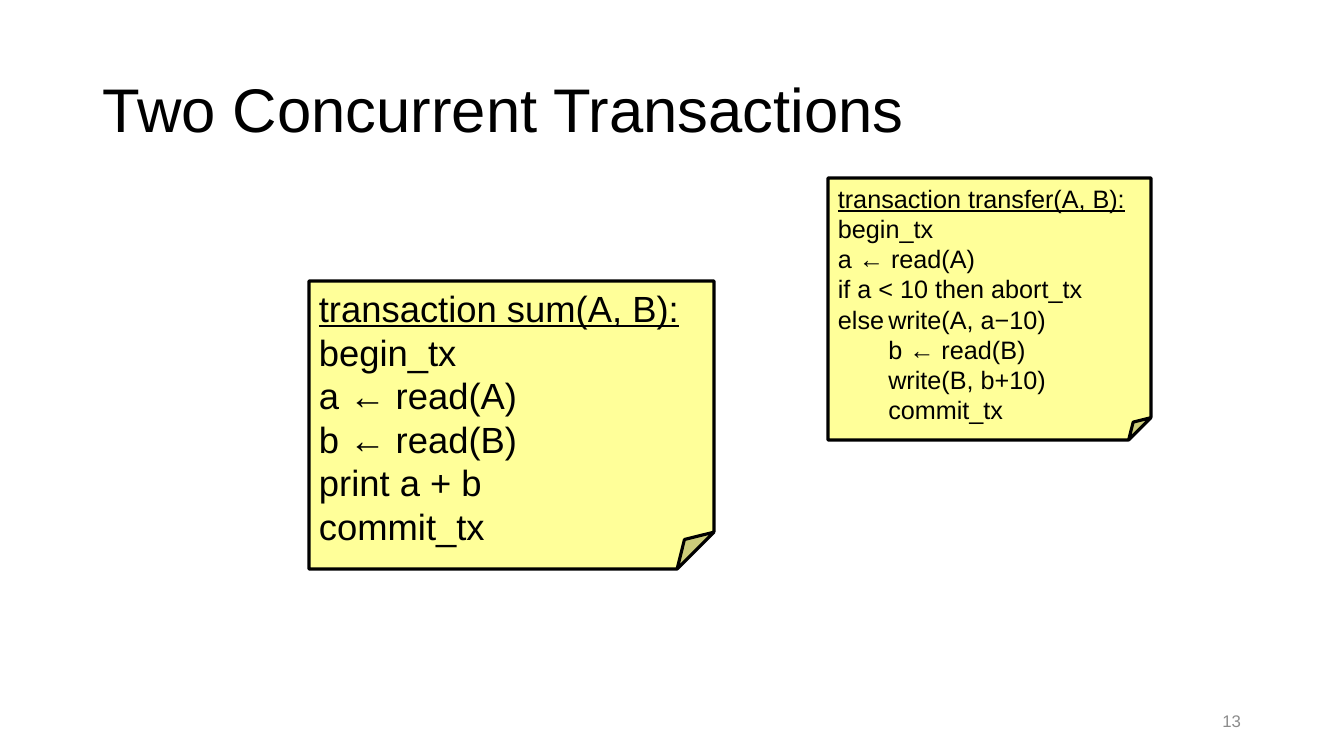
"""Build the slide comparing two concurrent transactions."""
import lxml.etree
import pptx
import pptx.dml.color
import pptx.enum.shapes
import pptx.enum.text
import pptx.oxml.ns
import pptx.util

SLIDE_SIZE = (1344, 756)
EMU_PER_PX = 914400 / 100.8
FONT = "Arial"
INK, PAPER, GRAY = "000000", "FFFF99", "8C8C8C"
LEFT = pptx.enum.text.PP_ALIGN.LEFT
RIGHT = pptx.enum.text.PP_ALIGN.RIGHT

LABELS = [
    ("Two Concurrent Transactions", (93, 40, 1159, 146), 44, INK, LEFT, 0.9),
    ("13", (949, 701, 302, 40), 12, GRAY, RIGHT, 1.0),
]
TRANSACTIONS = [
    ((309, 281, 405, 288), 26, 12800, [
        "transaction sum(A, B):",
        "begin_tx",
        "a ← read(A)",
        "b ← read(B)",
        "print a + b",
        "commit_tx",
    ]),
    ((828, 178, 323, 262), 18, 8500, [
        "transaction transfer(A, B):",
        "begin_tx",
        "a ← read(A)",
        "if a < 10 then abort_tx",
        "else\twrite(A, a−10)",
        "\tb ← read(B)",
        "\twrite(B, b+10)",
        "\tcommit_tx",
    ]),
]


def px(length):
    return pptx.util.Emu(round(length * EMU_PER_PX))


def color(hex_string):
    return pptx.dml.color.RGBColor.from_string(hex_string)


def write(frame, lines, size, ink, align, spacing):
    frame.word_wrap = True
    frame.text = "\n".join(lines)
    for paragraph in frame.paragraphs:
        paragraph.alignment = align
        paragraph.line_spacing = spacing
        for run in paragraph.runs:
            run.font.name = FONT
            run.font.size = pptx.util.Pt(size)
            run.font.color.rgb = color(ink)


def add_label(slide, text, box, size, ink, align, spacing):
    frame = slide.shapes.add_textbox(*map(px, box)).text_frame
    frame.vertical_anchor = pptx.enum.text.MSO_ANCHOR.MIDDLE
    write(frame, [text], size, ink, align, spacing)


def set_fold(note, fold):
    guides = next(note.element.iter(pptx.oxml.ns.qn("a:avLst")))
    lxml.etree.SubElement(
        guides, pptx.oxml.ns.qn("a:gd"), name="adj", fmla=f"val {fold}")


def add_transaction(slide, box, size, fold, steps):
    note = slide.shapes.add_shape(
        pptx.enum.shapes.MSO_SHAPE.FOLDED_CORNER, *map(px, box))
    set_fold(note, fold)
    note.shadow.inherit = False
    note.fill.solid()
    note.fill.fore_color.rgb = color(PAPER)
    note.line.color.rgb = color(INK)
    note.line.width = pptx.util.Pt(2.25)
    frame = note.text_frame
    frame.vertical_anchor = pptx.enum.text.MSO_ANCHOR.TOP
    write(frame, steps, size, INK, LEFT, 1.0)
    frame.paragraphs[0].runs[0].font.underline = True


def main():
    deck = pptx.Presentation()
    deck.slide_width, deck.slide_height = map(px, SLIDE_SIZE)
    slide = deck.slides.add_slide(deck.slide_layouts[6])
    for label in LABELS:
        add_label(slide, *label)
    for transaction in TRANSACTIONS:
        add_transaction(slide, *transaction)
    deck.save("out.pptx")


if __name__ == "__main__":
    main()
